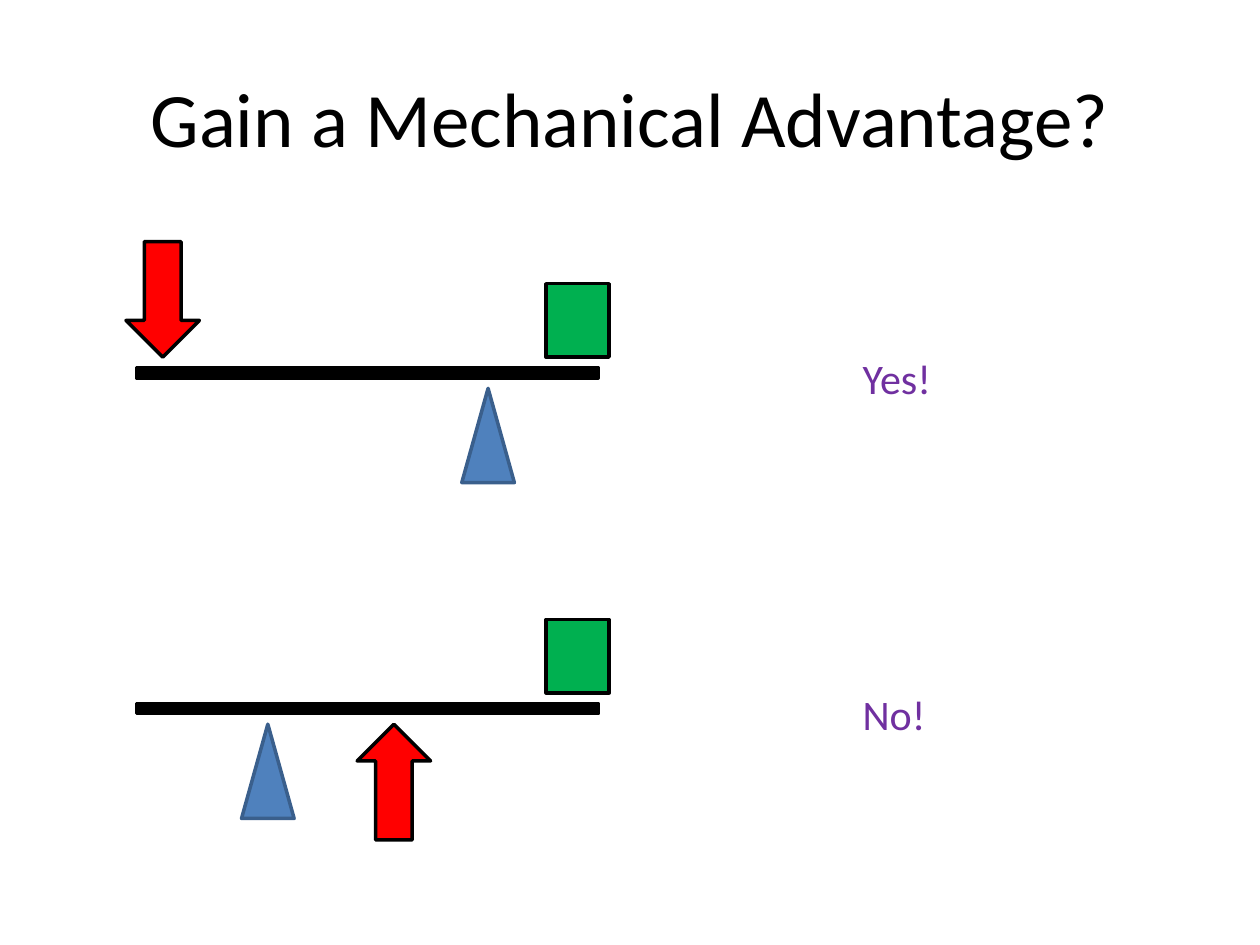
from pptx import Presentation
from pptx.dml.color import RGBColor
from pptx.enum.shapes import MSO_SHAPE as Shape
from pptx.enum.text import MSO_ANCHOR as Anchor, MSO_AUTO_SIZE as AutoSize, PP_ALIGN as Align
from pptx.util import Cm, Pt

COLORS = {
    "black": "000000",
    "fulcrum": "4F81BD",
    "fulcrum_line": "3A5F8C",
    "effort": "FF0000",
    "load": "00B050",
    "answer": "7030A0",
}


def color(name):
    return RGBColor.from_string(COLORS[name])


def add_part(slide, kind, box, fill, line="black", rotation=0):
    shape = slide.shapes.add_shape(kind, *map(Cm, box))
    shape.shadow.inherit = False
    shape.rotation = rotation
    shape.fill.solid()
    shape.fill.fore_color.rgb = color(fill)
    shape.line.color.rgb = color(line)
    shape.line.width = Pt(2)


def add_text(slide, box, text, size, text_color, align, frame_format):
    frame = slide.shapes.add_textbox(*map(Cm, box)).text_frame
    for name, value in frame_format.items():
        setattr(frame, name, value)
    paragraph = frame.paragraphs[0]
    paragraph.alignment = align
    run = paragraph.add_run()
    run.text = text
    run.font.color.rgb = color(text_color)
    for name, value in {"name": "Calibri", "size": Pt(size)}.items():
        setattr(run.font, name, value)


def add_title(slide, box, text):
    add_text(slide, box, text, 44, "black", Align.CENTER,
             {"word_wrap": True, "vertical_anchor": Anchor.MIDDLE})


def add_lever(slide, left, top, fulcrum_x, effort_x, pushes_up, answer, answer_width):
    """Draw a lever and its answer; fulcrum_x and effort_x count from left."""
    below_beam = top + 2.96
    add_part(slide, Shape.RECTANGLE, (left + 0.21, top + 2.54, 9.31, 0.21), "black")
    add_part(slide, Shape.ISOSCELES_TRIANGLE, (left + fulcrum_x, below_beam, 1.06, 1.9),
             "fulcrum", "fulcrum_line")
    add_part(slide, Shape.DOWN_ARROW,
             (left + effort_x, below_beam if pushes_up else top, 1.48, 2.33),
             "effort", rotation=180 if pushes_up else 0)
    add_part(slide, Shape.RECTANGLE, (left + 8.47, top + 0.85, 1.27, 1.48), "load")
    add_text(slide, (left + 14.6, top + 2.12, answer_width, 1.28), answer, 24, "answer",
             Align.LEFT, {"word_wrap": False, "auto_size": AutoSize.SHAPE_TO_FIT_TEXT})


def main():
    presentation = Presentation()
    presentation.slide_width, presentation.slide_height = Cm(25.4), Cm(19.05)
    slide = presentation.slides.add_slide(presentation.slide_layouts[6])
    add_title(slide, (1.27, 0.76, 22.86, 3.18), "Gain a Mechanical Advantage?")
    levers = [
        (6.77, 0, False, "Yes!", 1.91),
        (2.33, 4.66, True, "No!", 1.8),
    ]
    for row, lever in enumerate(levers):
        add_lever(slide, 2.54, 4.87 + row * 6.77, *lever)
    presentation.save("out.pptx")


if __name__ == "__main__":
    main()
